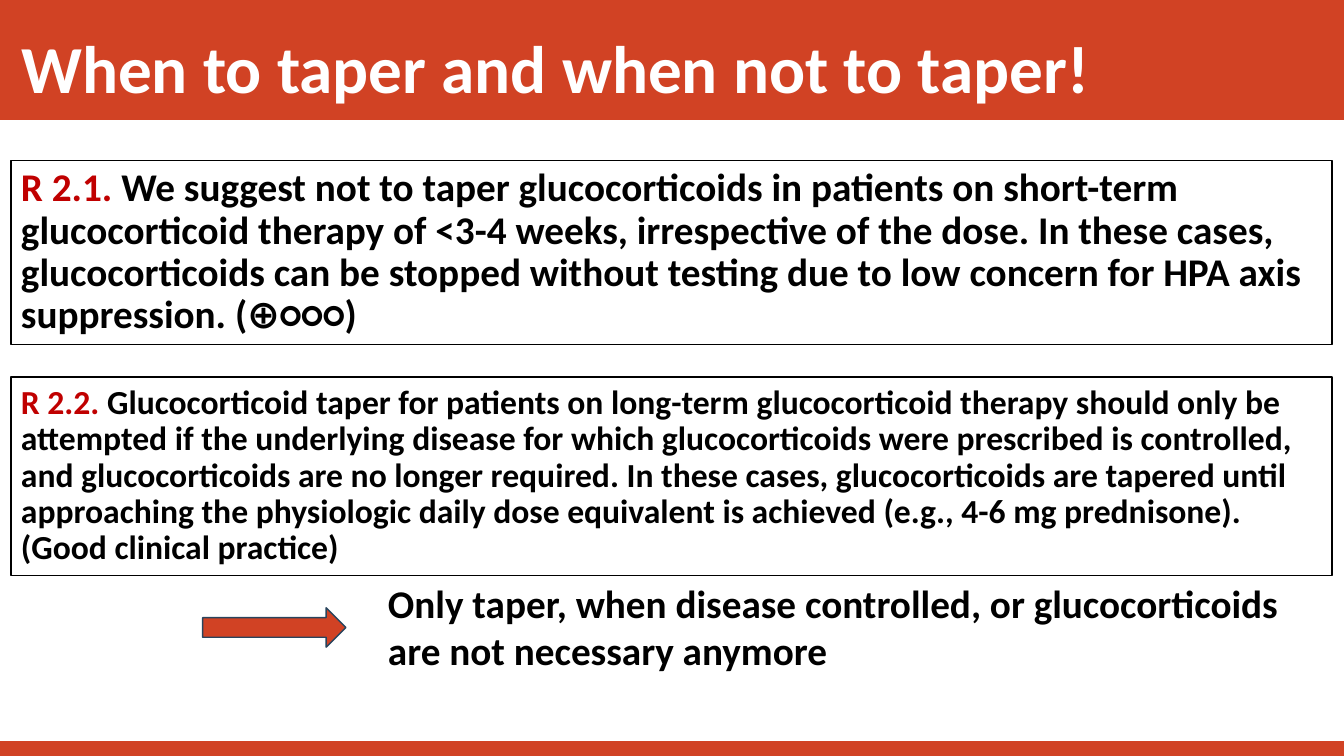
from pptx import Presentation
from pptx.dml.color import RGBColor
from pptx.enum.shapes import MSO_SHAPE
from pptx.enum.text import MSO_ANCHOR, PP_ALIGN
from pptx.util import Inches, Pt

COLORS = {"brand": "D14224", "label": "C00000", "text": "000000",
          "paper": "FFFFFF", "arrow_edge": "28445D"}
FONT = "Calibri"
SLIDE_WIDTH, SLIDE_HEIGHT = 13.33, 7.5
MARGIN, BODY_WIDTH = 0.11, 13.1
FOOTER_HEIGHT = 0.14

TITLE = "When to taper and when not to taper!"
RECOMMENDATIONS = [
    # label, wording, top, height, font size
    ("R 2.1. ",
     "We suggest not to taper glucocorticoids in patients on short-term "
     "glucocorticoid therapy of <3-4 weeks, irrespective of the dose. In these "
     "cases, glucocorticoids can be stopped without testing due to low concern "
     "for HPA axis suppression. (⊕○○○)", 1.59, 1.83, 28),
    ("R 2.2. ",
     "Glucocorticoid taper for patients on long-term glucocorticoid therapy "
     "should only be attempted if the underlying disease for which "
     "glucocorticoids were prescribed is controlled, and glucocorticoids are no "
     "longer required. In these cases, glucocorticoids are tapered until "
     "approaching the physiologic daily dose equivalent is achieved (e.g., 4-6 "
     "mg prednisone). (Good clinical practice)", 3.74, 1.97, 24),
]
TAKEAWAY = ("Only taper, when disease controlled, or glucocorticoids are not "
            "necessary anymore")


def color(name):
    return RGBColor.from_string(COLORS[name])


def add_block(page, kind, left, top, width, height, fill, edge):
    block = page.shapes.add_shape(kind, Inches(left), Inches(top),
                                  Inches(width), Inches(height))
    block.shadow.inherit = False
    block.fill.solid()
    block.fill.fore_color.rgb = color(fill)
    block.line.color.rgb = color(edge)
    block.line.width = Pt(1)
    return block


def write(box, spans, size, anchor=MSO_ANCHOR.MIDDLE, spacing=0.9):
    """Fill the box with one paragraph of (text, color name) spans."""
    frame = box.text_frame
    frame.word_wrap = True
    frame.vertical_anchor = anchor
    para = frame.paragraphs[0]
    para.alignment = PP_ALIGN.LEFT
    para.line_spacing = spacing
    para.space_before = Pt(0)
    for text, color_name in spans:
        span = para.add_run()
        span.text = text
        span.font.name = FONT
        span.font.size = Pt(size)
        span.font.bold = True
        span.font.color.rgb = color(color_name)


def main():
    deck = Presentation()
    deck.slide_width, deck.slide_height = Inches(SLIDE_WIDTH), Inches(SLIDE_HEIGHT)
    page = deck.slides.add_slide(deck.slide_layouts[5])

    for top, height in ((0, 1.18), (SLIDE_HEIGHT - FOOTER_HEIGHT, FOOTER_HEIGHT)):
        add_block(page, MSO_SHAPE.RECTANGLE, 0, top, SLIDE_WIDTH, height,
                  "brand", "brand")

    title = page.shapes.title
    title.left, title.top = Inches(MARGIN), Inches(0.18)
    title.width, title.height = Inches(BODY_WIDTH), Inches(1.06)
    write(title, [(TITLE, "paper")], 48)
    title.element.getparent().append(title.element)  # in front of the header band

    for label, wording, top, height, size in RECOMMENDATIONS:
        box = add_block(page, MSO_SHAPE.RECTANGLE, MARGIN, top, BODY_WIDTH, height,
                        "paper", "text")
        write(box, [(label, "label"), (wording, "text")], size)

    add_block(page, MSO_SHAPE.RIGHT_ARROW, 2.01, 6.03, 1.42, 0.39,
              "brand", "arrow_edge")
    takeaway = page.shapes.add_textbox(Inches(3.75), Inches(5.7),
                                       Inches(9.47), Inches(1.04))
    write(takeaway, [(TAKEAWAY, "text")], 28, MSO_ANCHOR.TOP, 1.0)

    deck.save("out.pptx")


if __name__ == "__main__":
    main()
